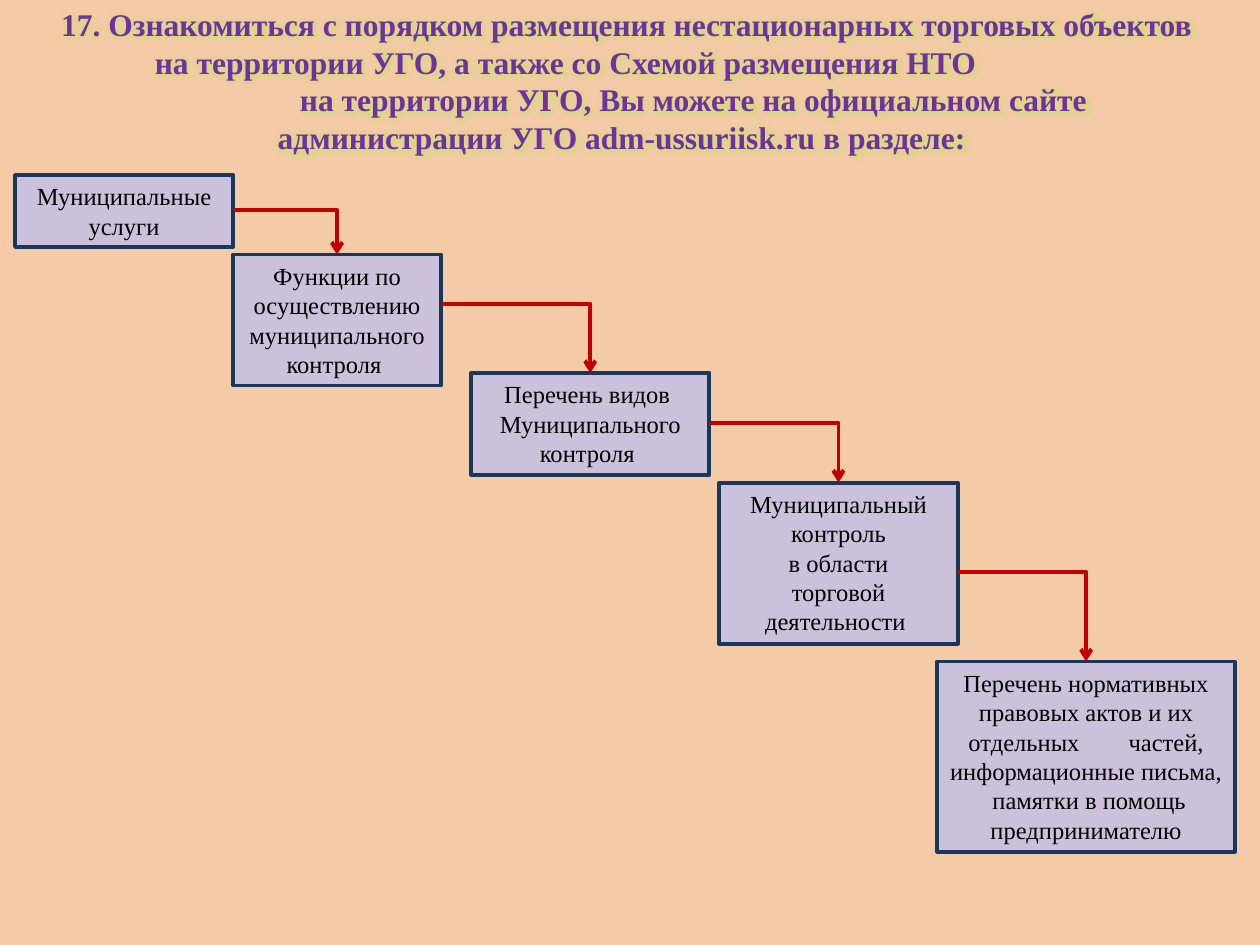
from lxml.etree import SubElement
from pptx import Presentation
from pptx.dml.color import RGBColor
from pptx.enum.shapes import MSO_CONNECTOR, MSO_SHAPE
from pptx.enum.text import MSO_ANCHOR, MSO_AUTO_SIZE, PP_ALIGN
from pptx.oxml.ns import qn
from pptx.util import Inches, Pt

COLORS = {
    "background": "F5CAA7",
    "title": "7030A0",
    "glow": "C8E070",
    "box": "CCC1DA",
    "border": "17375E",
    "arrow": "C00000",
    "text": "000000",
}
FONT = "Times New Roman"

# Title lines: text, left margin, right margin
TITLE = [
    ("17. Ознакомиться с порядком размещения нестационарных торговых объектов", 0, 0),
    ("на территории УГО, а также со Схемой размещения НТО", 0, 0.97),
    ("на территории УГО, Вы можете на официальном сайте", 1.06, 0),
    ("администрации УГО adm-ussuriisk.ru в разделе:", 0, 0.08),
]

# Steps: paragraphs, (left, top, width, height), height where the next arrow starts
STEPS = [
    (["Муниципальные услуги"], (0.12, 1.39, 1.73, 0.57), 1.67),
    (["Функции по осуществлению муниципального контроля "],
     (1.85, 2.02, 1.65, 1.04), 2.41),
    (["Перечень видов ", "Муниципального контроля "],
     (3.74, 2.96, 1.89, 0.81), 3.36),
    (["Муниципальный контроль", " в области ", "торговой деятельности "],
     (5.71, 3.83, 1.89, 1.28), 4.54),
    (["Перечень нормативных правовых актов и их отдельных\tчастей, "
      "информационные письма,", " памятки в помощь предпринимателю"],
     (7.44, 5.25, 2.36, 1.51), None),
]
WIDE_GAP = 2450  # extra spacing of a wide gap, hundredths of a point


def color(name):
    return RGBColor.from_string(COLORS[name])


def write(paragraph, text, *, size, name, bold=False, spacing=None, glow=None):
    """Add one centred run of text."""
    paragraph.alignment = PP_ALIGN.CENTER
    run = paragraph.add_run()
    run.text = text
    run.font.name = FONT
    run.font.size = Pt(size)
    run.font.bold = bold
    run.font.color.rgb = color(name)
    properties = run.font._element
    if spacing:
        properties.set("spc", str(spacing))
    if glow:
        effects = SubElement(properties, qn("a:effectLst"))
        halo = SubElement(effects, qn("a:glow"), rad=str(Pt(5)))
        tint = SubElement(halo, qn("a:srgbClr"), val=COLORS[glow])
        SubElement(tint, qn("a:alpha"), val="60000")
        properties.find(qn("a:solidFill")).addnext(effects)


def paragraphs_of(frame, count):
    return [frame.paragraphs[0]] + [frame.add_paragraph() for _ in range(count - 1)]


def add_title(slide):
    title = slide.shapes.title
    title.left, title.top = Inches(0.31), Inches(-0.05)
    title.width, title.height = Inches(9.33), Inches(1.38)
    frame = title.text_frame
    frame.word_wrap = True
    frame.auto_size = MSO_AUTO_SIZE.NONE
    frame.vertical_anchor = MSO_ANCHOR.MIDDLE
    for paragraph, (text, left, right) in zip(paragraphs_of(frame, len(TITLE)), TITLE):
        write(paragraph, text, size=18, name="title", bold=True, glow="glow")
        paragraph.line_spacing = Pt(21.5)
        paragraph.space_before = Pt(0)
        properties = paragraph._p.get_or_add_pPr()
        properties.set("marL", str(Inches(left)))
        properties.set("marR", str(Inches(right)))


def add_step(slide, texts, place):
    box = slide.shapes.add_shape(MSO_SHAPE.RECTANGLE, *map(Inches, place))
    box.shadow.inherit = False
    box.fill.solid()
    box.fill.fore_color.rgb = color("box")
    box.line.color.rgb = color("border")
    box.line.width = Pt(2.25)
    frame = box.text_frame
    frame.word_wrap = True
    frame.auto_size = MSO_AUTO_SIZE.SHAPE_TO_FIT_TEXT
    frame.vertical_anchor = MSO_ANCHOR.TOP
    for paragraph, text in zip(paragraphs_of(frame, len(texts)), texts):
        for index, part in enumerate(text.split("\t")):
            if index:
                write(paragraph, " ", size=14, name="text", spacing=WIDE_GAP)
            write(paragraph, part, size=14, name="text")


def add_arrow(slide, start, end):
    """Join two points with one right-angle bend: across, then down."""
    arrow = slide.shapes.add_connector(MSO_CONNECTOR.ELBOW, *map(Inches, start + end))
    arrow.line.color.rgb = color("arrow")
    arrow.line.width = Pt(2.25)
    properties = arrow._element.spPr
    properties.find(qn("a:prstGeom")).set("prst", "bentConnector2")
    SubElement(arrow.line._get_or_add_ln(), qn("a:tailEnd"), type="arrow")
    SubElement(properties, qn("a:effectLst"))


def main():
    presentation = Presentation()
    presentation.slide_width, presentation.slide_height = Inches(10), Inches(7.5)
    slide = presentation.slides.add_slide(presentation.slide_layouts[5])
    slide.background.fill.solid()
    slide.background.fill.fore_color.rgb = color("background")
    add_title(slide)

    # Staircase of steps
    for texts, place, _ in STEPS:
        add_step(slide, texts, place)

    # Arrows from the right side of a step to the top middle of the next
    for (_, place, exit_height), (_, following, _) in zip(STEPS, STEPS[1:]):
        left, _, width, _ = place
        next_left, next_top, next_width, _ = following
        add_arrow(slide, (left + width, exit_height),
                  (next_left + next_width / 2, next_top))

    presentation.save("out.pptx")


if __name__ == "__main__":
    main()
